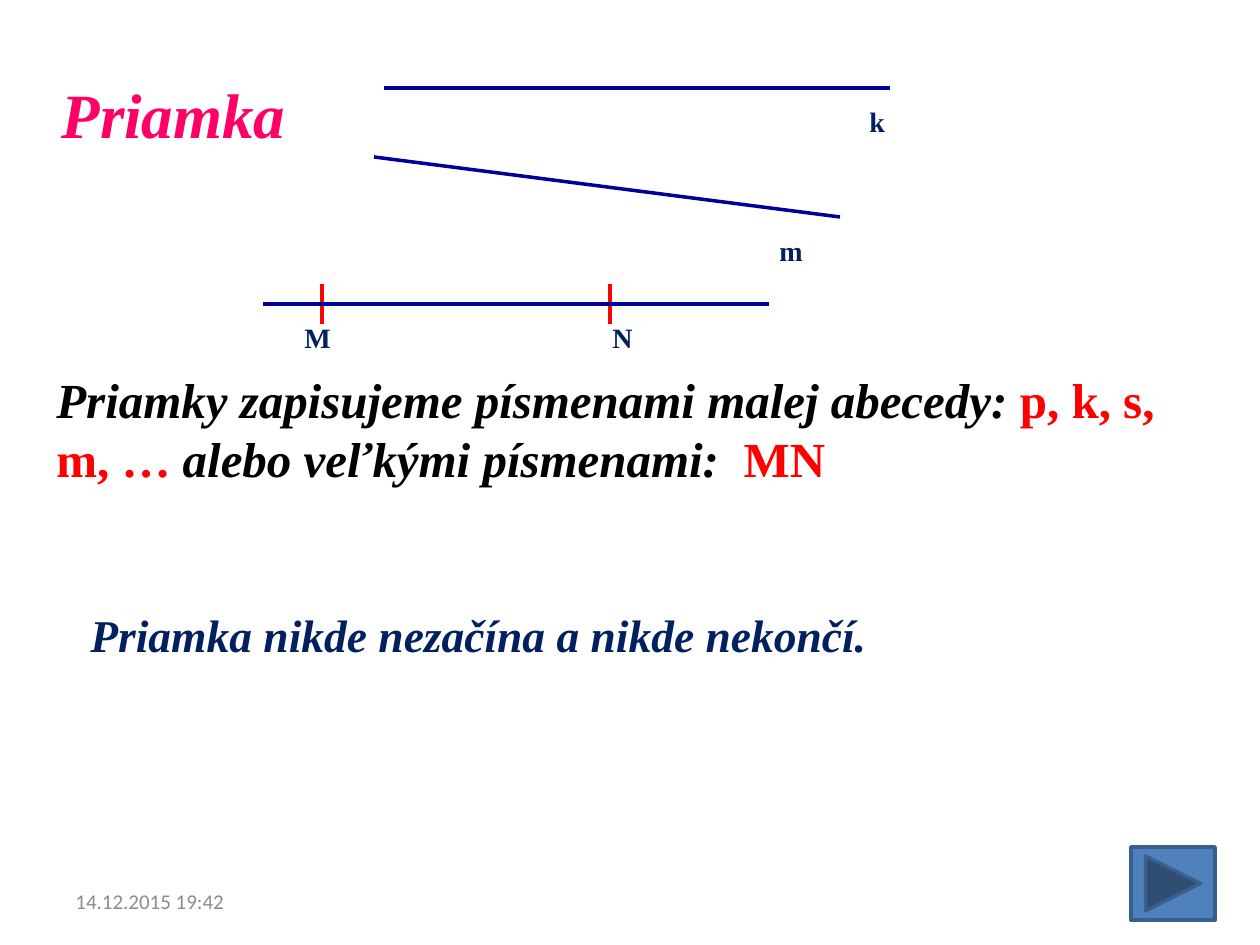
from lxml.etree import SubElement
from pptx import Presentation
from pptx.dml.color import RGBColor
from pptx.enum.shapes import MSO_CONNECTOR, MSO_SHAPE
from pptx.enum.text import MSO_ANCHOR, MSO_AUTO_SIZE, PP_ALIGN
from pptx.oxml.ns import qn
from pptx.util import Emu, Pt

PX_PER_INCH = 126
SERIF = "Times New Roman"
COLORS = {
    "title": "FF0066", "navy": "002060", "line": "000099", "red": "FF0000",
    "black": "000000", "button": "4F81BD", "button_edge": "3A5F8C", "date": "8C8C8C",
}


def px(n):
    return Emu(round(n * 914400 / PX_PER_INCH))


def rgb(name):
    return RGBColor.from_string(COLORS[name])


def write(sp, runs, size, font=SERIF, bold=True, italic=None, anchor=MSO_ANCHOR.TOP):
    """Fill a shape with one paragraph; runs are (text, color, italic)."""
    tf = sp.text_frame
    tf.word_wrap = True
    tf.auto_size = MSO_AUTO_SIZE.NONE
    tf.vertical_anchor = anchor
    p = tf.paragraphs[0]
    p.alignment = PP_ALIGN.LEFT
    p.font.name, p.font.size = font, Pt(size)
    p.font.bold, p.font.italic = bold, italic
    for text, color, slanted in runs:
        r = p.add_run()
        r.text = text
        r.font.color.rgb = rgb(color)
        r.font.italic = slanted


def add_title(s, text, box):
    sp = s.shapes.title
    sp.left, sp.top, sp.width, sp.height = map(px, box)
    write(sp, [(text, "title", True)], 36)


def add_text(s, runs, box, size, **style):
    write(s.shapes.add_textbox(*map(px, box)), runs, size, **style)


def add_label(s, text, x, y):
    add_text(s, [(text, "navy", None)], (x, y, 89, 47), 16)


def add_line(s, ends, color="line", width=2):
    line = s.shapes.add_connector(MSO_CONNECTOR.STRAIGHT, *map(px, ends))
    line.line.color.rgb = rgb(color)
    line.line.width = Pt(width)
    SubElement(line._element.spPr, qn("a:effectLst"))


def add_next_button(s, box):
    sp = s.shapes.add_shape(MSO_SHAPE.ACTION_BUTTON_FORWARD_OR_NEXT, *map(px, box))
    sp.shadow.inherit = False
    sp.fill.solid()
    sp.fill.fore_color.rgb = rgb("button")
    sp.line.color.rgb = rgb("button_edge")
    sp.line.width = Pt(2)


def main():
    prs = Presentation()
    prs.slide_width, prs.slide_height = px(1260), px(945)
    s = prs.slides.add_slide(prs.slide_layouts[5])
    add_title(s, "Priamka", (49, 69, 266, 89))

    # Lines named by a small letter
    add_line(s, (384, 88, 890, 88))
    add_label(s, "k", 857, 98)
    add_line(s, (374, 157, 840, 217))
    add_label(s, "m", 767, 227)

    # Line named by two of its points
    for name, tick_x, label_x in (("M", 322, 292), ("N", 610, 600)):
        add_line(s, (tick_x, 284, tick_x, 324), "red", 2.25)
        add_label(s, name, label_x, 314)
    add_line(s, (263, 304, 769, 304))

    # Rule and statement
    add_text(s, [
        ("Priamky zapisujeme písmenami malej abecedy: ", "black", True),
        ("p, k, s, m, … ", "red", False),
        ("alebo veľkými písmenami:  ", "black", True),
        ("MN", "red", False),
    ], (44, 363, 1186, 131), 28)
    add_text(s, [("Priamka nikde nezačína a nikde nekončí.", "navy", True)],
             (78, 601, 1111, 68), 26)

    # Navigation and date
    add_next_button(s, (1131, 847, 84, 73))
    add_text(s, [("14.12.2015 19:42", "date", None)], (63, 876, 294, 50), 12,
             font="Calibri", bold=False, anchor=MSO_ANCHOR.MIDDLE)
    prs.save("out.pptx")


if __name__ == "__main__":
    main()
